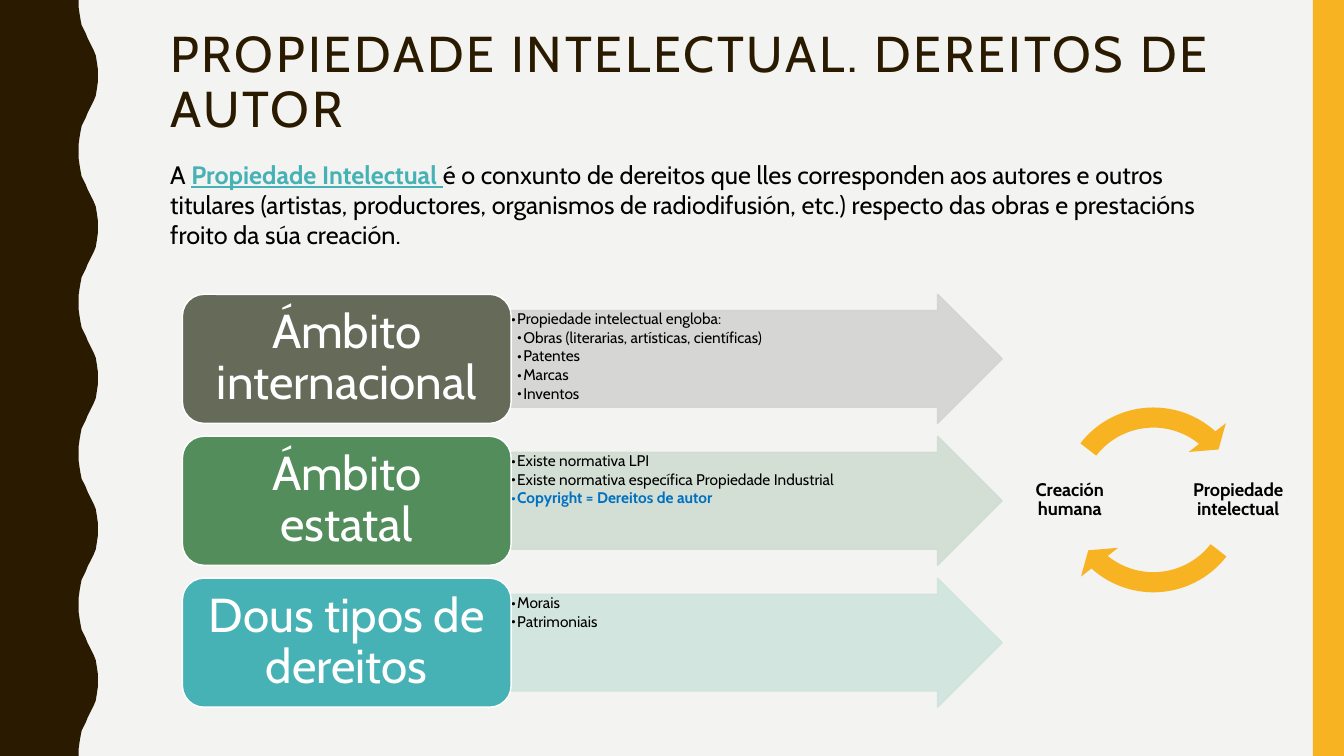
from lxml.etree import SubElement
from pptx import Presentation
from pptx.dml.color import RGBColor
from pptx.enum.shapes import MSO_SHAPE
from pptx.enum.text import MSO_ANCHOR, PP_ALIGN
from pptx.oxml.ns import qn
from pptx.util import Inches, Pt

FONT = "Cabin"
BLACK, WHITE, BROWN, YELLOW = "000000", "FFFFFF", "2A1A00", "F8B323"
TEAL, BLUE = "46B2B5", "0070C0"
HALF_WAVE = [
    (0.78, 0), (0.78, 0.07), (0.79, 0.14), (0.8, 0.2), (0.81, 0.25),
    (0.83, 0.29), (0.85, 0.33), (0.87, 0.38), (0.89, 0.42), (0.91, 0.46),
    (0.93, 0.5), (0.95, 0.55), (0.96, 0.61), (0.97, 0.68), (0.97, 0.75),
]
WAVE_LENGTH, WAVE_COUNT = 1.5, 5
ROW_TOP, ROW_HEIGHT = 2.92, 1.28
ROW_STEP = ROW_HEIGHT * 1.1
ROWS = [
    ("Ámbito internacional", "656A59", "D3D4D1", [
        (1, "Propiedade intelectual engloba:"),
        (2, "Obras (literarias, artísticas, científicas)"),
        (2, "Patentes"),
        (2, "Marcas"),
        (2, "Inventos"),
    ]),
    ("Ámbito estatal", "528D5B", "D0DDD2", [
        (1, "Existe normativa LPI"),
        (1, "Existe normativa específica Propiedade Industrial"),
        (1, "Copyright = Dereitos de autor"),
    ]),
    ("Dous tipos de dereitos", TEAL, "CFE4DE", [
        (1, "Morais"),
        (1, "Patrimoniais"),
    ]),
]
HIGHLIGHT = "Copyright = Dereitos de autor"
CYCLE_ARROWS = [
    (0.095, 6.851, 78.5, 22.649, 0.111),
    (0.095, 6.851, 186.5, 130.649, 0.111),
]
CYCLE_LABELS = [(11.77, "Propiedade intelectual"), (10.1, "Creación humana")]


def paint(color_format, color):
    """Set a colour format from a hex string."""
    color_format.rgb = RGBColor.from_string(color)


def fill_solid(fill, color, opacity=100):
    """Fill with one colour, partly transparent if opacity is below 100."""
    fill.solid()
    paint(fill.fore_color, color)
    if opacity < 100:
        clr = fill._xPr.find(f"{qn('a:solidFill')}/{qn('a:srgbClr')}")
        SubElement(clr, qn("a:alpha"), val=str(opacity * 1000))


def style_shape(shape, color, line=None, opacity=100):
    """Give a shape its fill and outline and remove its shadow."""
    shape.shadow.inherit = False
    fill_solid(shape.fill, color, opacity)
    if line:
        shape.line.width = Pt(1)
        fill_solid(shape.line.fill, line, opacity)
    else:
        shape.line.fill.background()


def add_preset(page, kind, left, top, width, height, color, line=None, opacity=100):
    """Add a filled preset shape."""
    shape = page.shapes.add_shape(
        kind, Inches(left), Inches(top), Inches(width), Inches(height))
    style_shape(shape, color, line, opacity)
    return shape


def set_frame(frame, margins, anchor=MSO_ANCHOR.TOP):
    """Set wrapping, anchor and the left, top, right and bottom margins."""
    frame.word_wrap = True
    frame.vertical_anchor = anchor
    (frame.margin_left, frame.margin_top,
     frame.margin_right, frame.margin_bottom) = map(Inches, margins)


def style_span(span, size, color, bold=False):
    """Format one run of text."""
    span.font.name = FONT
    span.font.size = Pt(size)
    span.font.bold = bold
    paint(span.font.color, color)


def write(frame, text, size, color, bold=False, align=PP_ALIGN.CENTER):
    """Write one tightly spaced paragraph and return its run."""
    frame.text = text
    para = frame.paragraphs[0]
    para.alignment = align
    para.line_spacing = 0.9
    span = para.runs[0]
    style_span(span, size, color, bold)
    return span


def add_box(page, left, top, width, height):
    """Add a text box and return its text frame."""
    box = page.shapes.add_textbox(
        Inches(left), Inches(top), Inches(width), Inches(height))
    box.text_frame.word_wrap = True
    return box.text_frame


def add_wave(page):
    """Draw the dark band with its wavy right edge."""
    period = HALF_WAVE + [(x, WAVE_LENGTH - y) for x, y in HALF_WAVE[-2::-1]]
    edge = [(x, y + wave * WAVE_LENGTH)
            for wave in range(WAVE_COUNT) for x, y in period]
    corners = edge + [(0, WAVE_LENGTH * WAVE_COUNT)]
    builder = page.shapes.build_freeform(0, 0)
    builder.add_line_segments([(Inches(x), Inches(y)) for x, y in corners])
    style_shape(builder.convert_to_shape(), BROWN)


def add_intro(page):
    """Write the definition under the title."""
    para = add_box(page, 1.59, 1.53, 10.9, 1.01).paragraphs[0]
    parts = [
        ("A ", False),
        ("Propiedade Intelectual ", True),
        ("é o conxunto de dereitos que lles corresponden aos autores e outros "
         "titulares (artistas, productores, organismos de radiodifusión, etc.) "
         "respecto das obras e prestacións froito da súa creación.", False),
    ]
    for text, is_term in parts:
        span = para.add_run()
        span.text = text
        style_span(span, 18, TEAL if is_term else BLACK, is_term)
        span.font.underline = is_term


def add_bullet(para, level, text):
    """Write one bulleted line at the given level."""
    para.text = text
    para.level = level
    para.alignment = PP_ALIGN.LEFT
    para.line_spacing = 0.9
    para.space_after = Pt(1.4)
    marked = text == HIGHLIGHT
    style_span(para.runs[0], 11, BLUE if marked else BLACK, marked)
    properties = para._p.get_or_add_pPr()
    properties.set("marL", str(Inches(0.06 * level)))
    properties.set("indent", str(Inches(-0.06)))
    SubElement(properties, qn("a:buFont"), typeface=FONT)
    SubElement(properties, qn("a:buChar"), char="•")


def add_row(page, top, heading, color, tint, bullets):
    """Add an arrow with bullets and the heading block before it."""
    arrow = add_preset(page, MSO_SHAPE.RIGHT_ARROW, 5.06, top, 4.88, ROW_HEIGHT,
                       tint, tint, 90)
    arrow.adjustments[0] = 0.75
    frame = arrow.text_frame
    set_frame(frame, (0.01, 0.01, 0.33, 0.01))
    for index, (level, text) in enumerate(bullets):
        para = frame.add_paragraph() if index else frame.paragraphs[0]
        add_bullet(para, level, text)
    block = add_preset(page, MSO_SHAPE.ROUNDED_RECTANGLE, 1.81, top, 3.26,
                       ROW_HEIGHT, color, WHITE)
    set_frame(block.text_frame, (0.14, 0.07, 0.14, 0.07), MSO_ANCHOR.MIDDLE)
    write(block.text_frame, heading, 34, WHITE)


def add_cycle(page):
    """Add the two curved arrows and their labels."""
    for angles in CYCLE_ARROWS:
        arrow = add_preset(page, MSO_SHAPE.CIRCULAR_ARROW, 10.39, 3.91, 2.1, 2.1, YELLOW)
        for index, value in enumerate(angles):
            arrow.adjustments[index] = value
    for left, text in CYCLE_LABELS:
        frame = add_box(page, left, 4.45, 1.02, 1.02)
        set_frame(frame, (0.02,) * 4, MSO_ANCHOR.MIDDLE)
        write(frame, text, 13, BLACK, bold=True)


def main():
    """Build the slide and save the deck."""
    deck = Presentation()
    deck.slide_width, deck.slide_height = Inches(13.33), Inches(7.5)
    page = deck.slides.add_slide(deck.slide_layouts[6])
    fill_solid(page.background.fill, "F3F3F2")
    add_wave(page)
    add_preset(page, MSO_SHAPE.RECTANGLE, 13.02, 0, 0.31, 7.5, YELLOW)
    title = write(add_box(page, 1.59, 0.24, 11, 1.49),
                  "PROPIEDADE INTELECTUAL. DEREITOS DE AUTOR",
                  36, BROWN, align=PP_ALIGN.LEFT)
    title.font._element.set("spc", "200")
    add_intro(page)
    add_cycle(page)
    for index, row in enumerate(ROWS):
        add_row(page, ROW_TOP + index * ROW_STEP, *row)
    deck.save("out.pptx")


if __name__ == "__main__":
    main()
